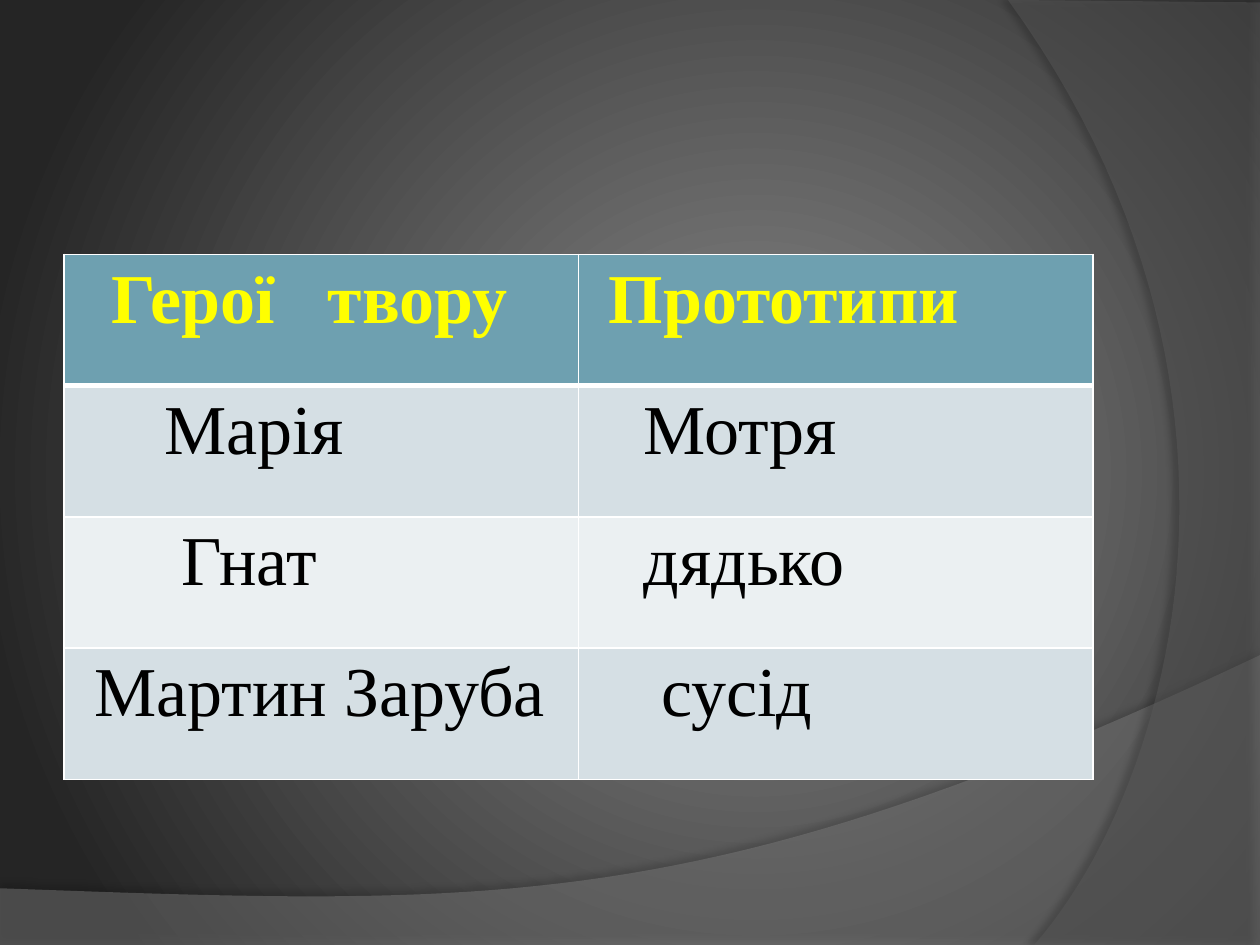
import pptx
import pptx.dml.color
import pptx.oxml
import pptx.oxml.ns
import pptx.util

Pt = pptx.util.Pt
RGBColor = pptx.dml.color.RGBColor

BG_CENTRE = RGBColor(0x8B, 0x8B, 0x8B)
BG_EDGE = RGBColor(0x25, 0x25, 0x25)
LOWER_WAVE = RGBColor(0x7F, 0x7F, 0x7F)
RIGHT_WAVE = RGBColor(0x5E, 0x5E, 0x5E)
HEADER_FILL = RGBColor(0x6E, 0xA0, 0xB0)
BAND_FILLS = (RGBColor(0xD5, 0xDF, 0xE4), RGBColor(0xEB, 0xF0, 0xF2))
YELLOW = RGBColor(0xFF, 0xFF, 0x00)
BLACK = RGBColor(0, 0, 0)
WHITE = RGBColor(0xFF, 0xFF, 0xFF)

FONT = "Times New Roman"
COL_WIDTH, ROW_HEIGHT = 294, 75
# Each cell: text and its left inset in points
ROWS = [
    [("Герої\tтвору", 27.2), ("Прототипи", 17.2)],
    [("Марія", 57.2), ("Мотря", 37.2)],
    [("Гнат", 67.2), ("дядько", 37.2)],
    [("Мартин Заруба", 17.2), ("сусід", 47.2)],
]


def make_xml(tag, attrs="", inner=""):
    ns = pptx.oxml.ns.nsdecls("a")
    return pptx.oxml.parse_xml(f"<a:{tag} {ns} {attrs}>{inner}</a:{tag}>")


def set_background(s):
    """Radial gradient, light at its centre."""
    fill = s.background.fill
    fill.gradient()
    for stop, color, pos in zip(fill.gradient_stops, (BG_CENTRE, BG_EDGE), (0, 1)):
        stop.color.rgb = color
        stop.position = pos
    grad = s.background.fill.gradient_stops and s.element.find(
        ".//" + pptx.oxml.ns.qn("a:gradFill"))
    grad.remove(grad.find(pptx.oxml.ns.qn("a:lin")))
    grad.append(make_xml("path", 'path="circle"',
                         '<a:fillToRect l="60000" t="50000" r="40000" b="50000"/>'))


def bezier(p0, p1, p2, p3, steps=48):
    """Points along a cubic curve, without its start."""
    points = []
    for i in range(1, steps + 1):
        t = i / steps
        u = 1 - t
        points.append(tuple(u**3 * a + 3 * u * u * t * b + 3 * u * t * t * c + t**3 * d
                            for a, b, c, d in zip(p0, p1, p2, p3)))
    return points


def add_wave(s, corners, curve, color, opacity, shadow):
    """Translucent outline: straight corners, then a curve from the last one."""
    points = corners + bezier(corners[-1], *curve)
    emu = [(Pt(x), Pt(y)) for x, y in points]
    builder = s.shapes.build_freeform(*emu[0])
    builder.add_line_segments(emu[1:], close=True)
    sp = builder.convert_to_shape()
    sp.fill.solid()
    sp.fill.fore_color.rgb = color
    clr = sp.element.spPr.find(".//" + pptx.oxml.ns.qn("a:srgbClr"))
    clr.append(make_xml("alpha", f'val="{opacity * 1000}"'))
    sp.line.fill.background()
    sp.shadow.inherit = False
    alpha, blur, dist, angle = shadow
    effects = sp.element.spPr.find(pptx.oxml.ns.qn("a:effectLst"))
    effects.append(make_xml(
        "outerShdw",
        f'blurRad="{Pt(blur)}" dist="{Pt(dist)}" dir="{angle * 60000}" rotWithShape="0"',
        f'<a:srgbClr val="{BLACK}"><a:alpha val="{alpha * 1000}"/></a:srgbClr>'))


def set_borders(cell, top, bottom):
    tc_pr = cell._tc.get_or_add_tcPr()
    for side, width in (("L", 1), ("R", 1), ("T", top), ("B", bottom)):
        tc_pr.append(make_xml(
            f"ln{side}", f'w="{Pt(width)}"',
            f'<a:solidFill><a:srgbClr val="{WHITE}"/></a:solidFill>'))


def fill_cell(cell, row, text, inset):
    header = row == 0
    set_borders(cell, top=3 if row == 1 else 1, bottom=3 if header else 1)
    cell.fill.solid()
    cell.fill.fore_color.rgb = HEADER_FILL if header else BAND_FILLS[(row - 1) % 2]
    cell.margin_left = Pt(inset)
    p = cell.text_frame.paragraphs[0]
    if "\t" in text:
        p._p.get_or_add_pPr().append(
            make_xml("tabLst", "", f'<a:tab pos="{Pt(123.5)}" algn="l"/>'))
    r = p.add_run()
    r.text = text
    r.font.name = FONT
    r.font.size = Pt(40)
    r.font.bold = header
    r.font.color.rgb = YELLOW if header else BLACK


def add_heroes_table(s):
    n_rows, n_cols = len(ROWS), len(ROWS[0])
    table = s.shapes.add_table(n_rows, n_cols, Pt(36.7), Pt(145.4),
                               Pt(n_cols * COL_WIDTH), Pt(n_rows * ROW_HEIGHT)).table
    for col in table.columns:
        col.width = Pt(COL_WIDTH)
    for i, row in enumerate(ROWS):
        table.rows[i].height = Pt(ROW_HEIGHT)
        for j, (text, inset) in enumerate(row):
            fill_cell(table.cell(i, j), i, text, inset)


def main():
    prs = pptx.Presentation()
    prs.slide_width, prs.slide_height = Pt(720), Pt(540)
    s = prs.slides.add_slide(prs.slide_layouts[6])
    set_background(s)
    add_wave(s, [(0, 507.6), (0, 540.5), (720, 540.5), (720, 374.4)],
             [(402.5, 524.9), (281.5, 517.7), (0, 507.6)],
             LOWER_WAVE, 45, (35, 4, 3.5, 270))
    add_wave(s, [(576, 0), (720, 1.4), (720, 540), (591, 540)],
             [(673.2, 445.7), (733, 216), (576, 0)],
             RIGHT_WAVE, 40, (45, 4, 4, 180))
    add_heroes_table(s)
    prs.save("out.pptx")


if __name__ == "__main__":
    main()
